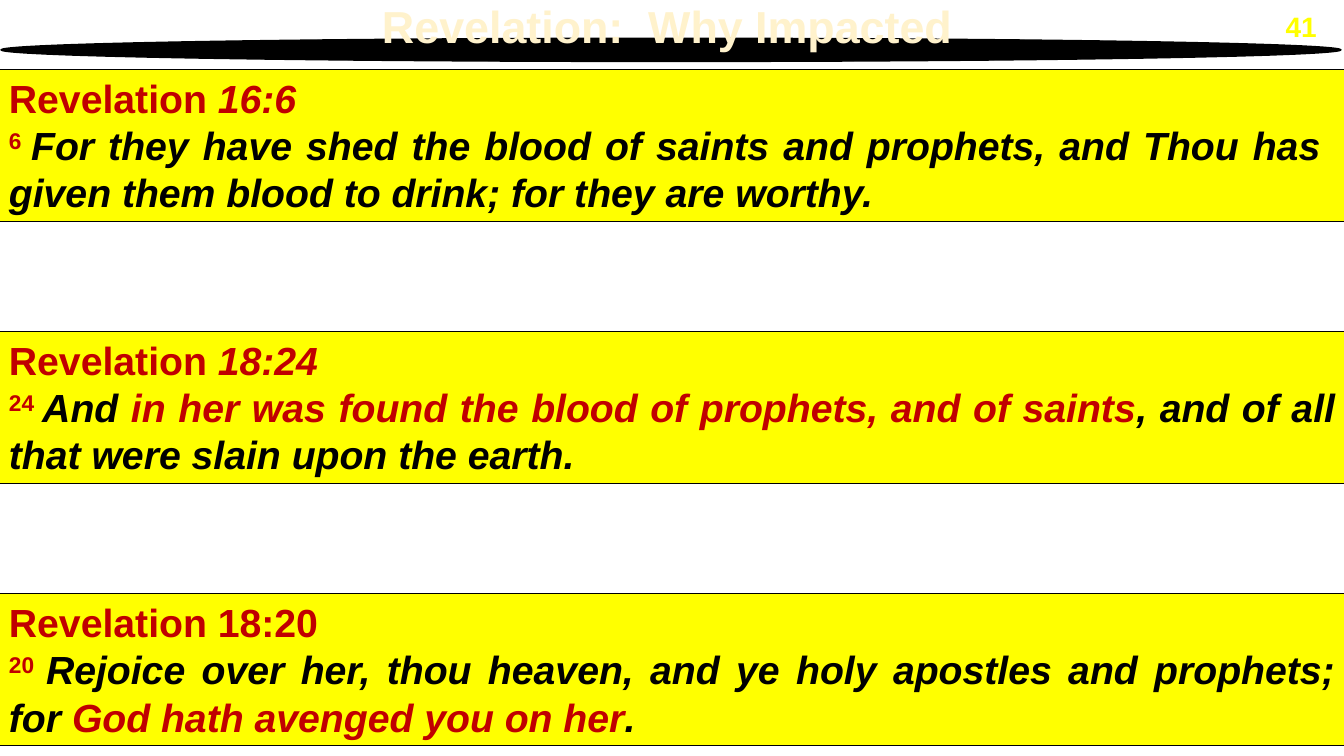
import pptx
import pptx.util
import pptx.dml.color
import pptx.enum.shapes
import pptx.enum.text

Inches = pptx.util.Inches
Pt = pptx.util.Pt
Align = pptx.enum.text.PP_ALIGN
Anchor = pptx.enum.text.MSO_ANCHOR
Fit = pptx.enum.text.MSO_AUTO_SIZE
Kind = pptx.enum.shapes.MSO_SHAPE

COLORS = {"black": "000000", "yellow": "FFFF00", "red": "C00000", "cream": "FFF2CC"}

VERSES = [
    ([("Revelation", "red", False), (" 16:6", "red", True)],
     "6 ",
     [("For they have shed the blood of saints and prophets, and Thou has  "
       "given them blood to drink; for they are worthy.", "black", True)]),
    ([("Revelation", "red", False), (" 18:24", "red", True)],
     "24 ",
     [("And ", "black", True),
      ("in her was found the blood of prophets, and of saints", "red", True),
      (", and of all that were slain upon the earth.", "black", True)]),
    ([("Revelation 18:20", "red", False)],
     "20 ",
     [("Rejoice over her, thou heaven, and ye holy apostles and prophets; for ",
       "black", True),
      ("God hath avenged you on her", "red", True),
      (".", "black", True)]),
]


def color(name):
    """Return the named colour."""
    return pptx.dml.color.RGBColor.from_string(COLORS[name])


def style(run, size, tint, italic=False):
    """Format a run in bold Arial."""
    font = run.font
    font.name, font.size = "Arial", Pt(size)
    font.bold, font.italic = True, italic
    font.color.rgb = color(tint)


def add_run(para, text, tint, italic):
    """Add a verse run to a paragraph."""
    run = para.add_run()
    run.text = text
    style(run, 28, tint, italic)
    return run


def add_shape(slide, kind, box, fill, width):
    """Add a filled shape with a black outline."""
    shape = slide.shapes.add_shape(kind, *map(Inches, box))
    shape.shadow.inherit = False
    shape.fill.solid()
    shape.fill.fore_color.rgb = color(fill)
    shape.line.color.rgb = color("black")
    shape.line.width = Pt(width)
    return shape


def add_head(slide, box):
    """Place the title over its flat ellipse, with the page number."""
    left, top, width, height = box
    title = slide.shapes.title
    title.left, title.top = Inches(left), Inches(top)
    title.width, title.height = Inches(width), Inches(height)
    title.text_frame.text = "Revelation:  Why Impacted"
    title.text_frame.vertical_anchor = Anchor.TOP
    title.text_frame.paragraphs[0].line_spacing = 0.9

    oval = add_shape(slide, Kind.OVAL,
                     (left + 0.06, top + 0.38, width - 0.05, 0.23), "black", 1)
    title.element.addprevious(oval.element)

    page = slide.shapes.add_textbox(Inches(left + 12.55), Inches(top + 0.06),
                                    Inches(0.81), Inches(0.4))
    page.text_frame.text = "41"
    page.text_frame.vertical_anchor = Anchor.MIDDLE

    for shape, size, tint in ((title, 32, "cream"), (page, 20, "yellow")):
        frame = shape.text_frame
        frame.word_wrap = True
        frame.auto_size = Fit.NONE
        para = frame.paragraphs[0]
        para.alignment = Align.CENTER
        style(para.runs[0], size, tint)


def add_verse(slide, box, verse):
    """Place a yellow panel with a reference and its verse."""
    head, number, body = verse
    panel = add_shape(slide, Kind.RECTANGLE, box, "yellow", 0.75)
    frame = panel.text_frame
    frame.word_wrap = True
    frame.auto_size = Fit.SHAPE_TO_FIT_TEXT
    frame.vertical_anchor = Anchor.TOP
    first, second = frame.paragraphs[0], frame.add_paragraph()
    first.alignment = second.alignment = Align.JUSTIFY
    for part in head:
        add_run(first, *part)
    mark = add_run(second, number, "red", False)
    mark.font._element.set("baseline", "30000")
    for part in body:
        add_run(second, *part)


def main():
    """Build and save the slide."""
    deck = pptx.Presentation()
    deck.slide_width, deck.slide_height = Inches(13.33), Inches(7.5)
    slide = deck.slides.add_slide(deck.slide_layouts[5])
    add_head(slide, (-0.05, 0, 13.34, 0.58))
    for row, verse in enumerate(VERSES):
        add_verse(slide, (-0.01, 0.69 + 2.6 * row, 13.35, 1.51), verse)
    deck.save("out.pptx")


if __name__ == "__main__":
    main()
